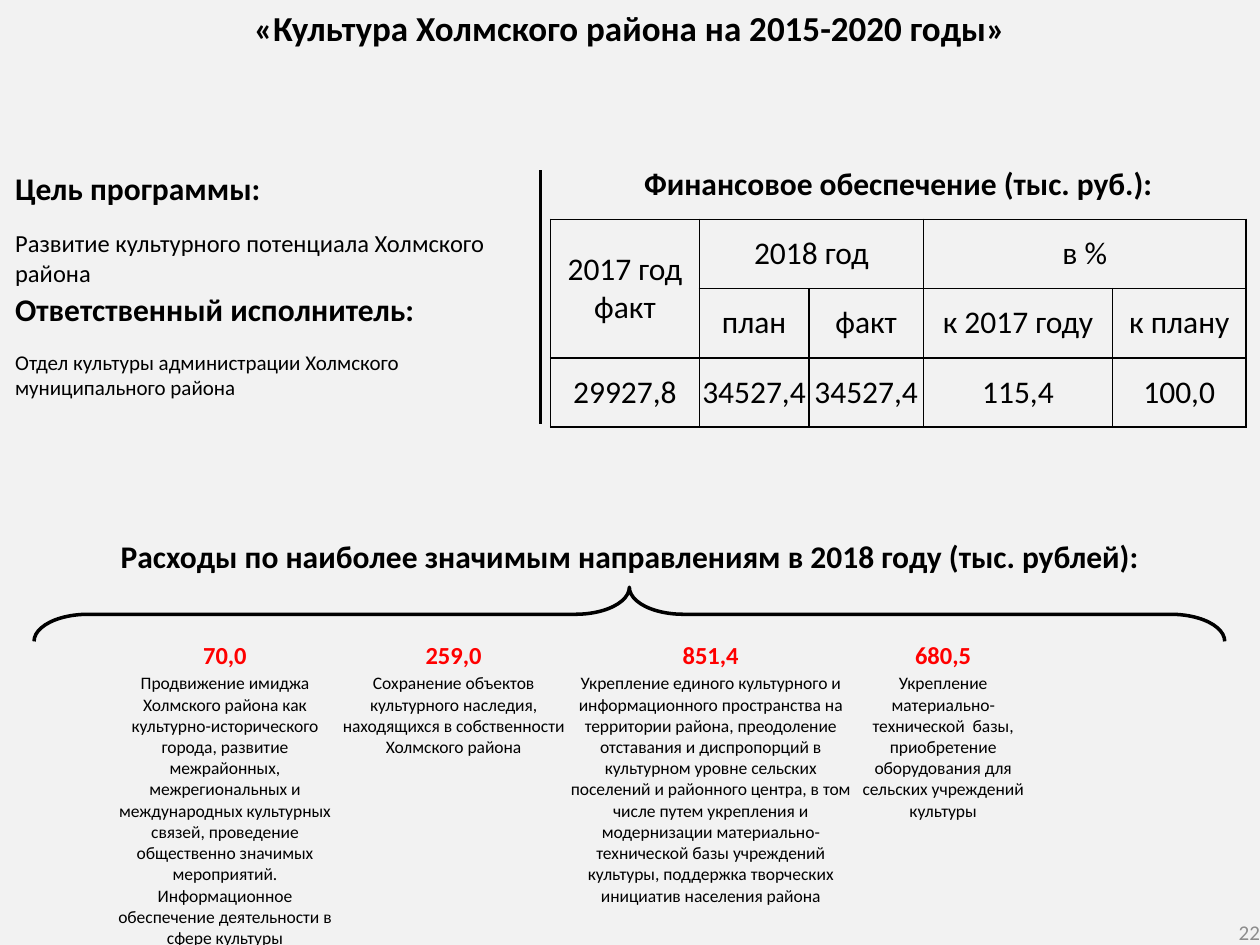
from dataclasses import dataclass

from lxml import etree
from pptx import Presentation
from pptx.dml.color import RGBColor
from pptx.enum.shapes import MSO_SHAPE
from pptx.enum.text import MSO_ANCHOR, PP_ALIGN
from pptx.oxml import parse_xml
from pptx.util import Inches, Pt

LEFT, CENTER, RIGHT = PP_ALIGN.LEFT, PP_ALIGN.CENTER, PP_ALIGN.RIGHT
TOP, MIDDLE, BOTTOM = MSO_ANCHOR.TOP, MSO_ANCHOR.MIDDLE, MSO_ANCHOR.BOTTOM
BRACE = MSO_SHAPE.RIGHT_BRACE
NS = "http://schemas.openxmlformats.org/drawingml/2006/main"
PLAIN = "{2D5ABB26-0587-4C30-8999-92F81FD0307C}"  # table style without grid


@dataclass(frozen=True)
class Theme:
    font: str = "Calibri"
    back: RGBColor = RGBColor(0xF2, 0xF2, 0xF2)
    ink: RGBColor = RGBColor(0, 0, 0)
    red: RGBColor = RGBColor(0xFF, 0, 0)
    grey: RGBColor = RGBColor(0x8C, 0x8C, 0x8C)
    title: int = 20
    head: int = 18
    body: int = 14
    small: int = 12
    tiny: int = 10


T = Theme()


def write(box, text, size, bold=False, color=T.ink, align=CENTER,
          anchor=MIDDLE, pad=None, edges=None):
    """Set text in a text box or table cell; edges maps L, R, T, B to points."""
    if edges is not None:
        props = box._tc.get_or_add_tcPr()
        for side, width in edges.items():
            props.append(parse_xml(
                f'<a:ln{side} xmlns:a="{NS}" w="{Pt(width)}"><a:solidFill>'
                f'<a:srgbClr val="{T.ink}"/></a:solidFill></a:ln{side}>'))
        box.fill.background()
    frame = box.text_frame
    frame.word_wrap = True
    frame.text = text
    for part in frame.paragraphs:
        part.alignment = align
        part.font.name, part.font.size = T.font, Pt(size)
        part.font.bold, part.font.color.rgb = bold, color
    # Cells keep anchor and margins on the cell, boxes on the frame.
    holder = frame if edges is None else box
    holder.vertical_anchor = anchor
    if pad is not None:
        holder.margin_left = holder.margin_right = Inches(pad)
        holder.margin_top = holder.margin_bottom = Inches(pad)
    return frame


def grid(left, top, cols, rows):
    """Add a plain table with the given column widths and row heights."""
    frame = slide.shapes.add_table(
        len(rows), len(cols), Inches(left), Inches(top),
        Inches(sum(cols)), Inches(sum(rows)))
    table = frame.table
    table.first_row = table.horz_banding = False
    table._tbl.tblPr[0].text = PLAIN
    for col, width in zip(table.columns, cols):
        col.width = Inches(width)
    for row, height in zip(table.rows, rows):
        row.height = Inches(height)
    return table


deck = Presentation()
deck.slide_width, deck.slide_height = Inches(10), Inches(7.5)
slide = deck.slides.add_slide(deck.slide_layouts[6])
slide.background.fill.solid()
slide.background.fill.fore_color.rgb = T.back

# Title with a soft text shadow
box = slide.shapes.add_textbox(0, 0, Inches(10), Inches(0.71))
frame = write(box, "«Культура Холмского района на 2015-2020 годы»",
              T.title, True, anchor=TOP)
run = frame.paragraphs[0].runs[0]
run._r.get_or_add_rPr().append(parse_xml(
    f'<a:effectLst xmlns:a="{NS}"><a:outerShdw blurRad="38100" dist="38100" '
    'dir="2700000" algn="tl"><a:srgbClr val="000000"><a:alpha val="43000"/>'
    '</a:srgbClr></a:outerShdw></a:effectLst>'))

box = slide.shapes.add_textbox(0, Inches(4.18), Inches(10), Inches(0.47))
write(box, "Расходы по наиболее значимым направлениям в 2018 году (тыс. рублей):",
      T.head, True)

# Funding table
funds = [
    ["Финансовое обеспечение (тыс. руб.):", "", "", "", ""],
    ["2017 год факт", "2018 год", "", "в %", ""],
    ["", "план", "факт", "к 2017 году", "к плану"],
    ["29927,8", "34527,4", "34527,4", "115,4", "100,0"],
]
table = grid(4.37, 1.19, [1.18, 0.87, 0.91, 1.5, 1.06], [0.55] * 4)
for r, row in enumerate(funds):
    for c, text in enumerate(row):
        write(table.cell(r, c), text, T.head, r == 0,
              pad=0.01 if r == 3 else 0.04,
              edges=dict.fromkeys("LRTB" if r else "B", 1))
for r, c, end_r, end_c in [(0, 0, 0, 4), (1, 0, 2, 0), (1, 1, 1, 2), (1, 3, 1, 4)]:
    table.cell(r, c).merge(table.cell(end_r, end_c))

# Brace over the spending columns
brace = slide.shapes.add_shape(
    BRACE, Inches(4.78), Inches(0.15), Inches(0.43), Inches(9.45))
brace.rotation = 270
brace.adjustments[0], brace.adjustments[1] = 0.997, 0.5
brace.shadow.inherit = False
brace.fill.background()
brace.line.color.rgb, brace.line.width = T.ink, Pt(2)

# Goal and owner
goals = [
    ("Цель программы:", T.head, True),
    ("Развитие культурного потенциала Холмского района", T.body, False),
    ("Ответственный исполнитель:", T.head, True),
    ("Отдел культуры администрации Холмского муниципального района",
     T.small, False),
]
table = grid(0.12, 1.35, [4.17], [0.47, 0.49, 0.47, 0.59])
for r, (text, size, bold) in enumerate(goals):
    write(table.cell(r, 0), text, size, bold, align=LEFT, anchor=TOP,
          pad=0, edges={"R": 2.25})

# Main spending lines
costs = [
    ("70,0", "Продвижение имиджа Холмского района как культурно-исторического "
     "города, развитие межрайонных, межрегиональных и международных культурных "
     "связей, проведение общественно значимых мероприятий. Информационное "
     "обеспечение деятельности в сфере культуры"),
    ("259,0", "Сохранение объектов культурного наследия, находящихся в "
     "собственности Холмского района"),
    ("851,4", "Укрепление единого культурного и информационного пространства на "
     "территории района, преодоление отставания и диспропорций в культурном "
     "уровне сельских поселений и районного центра, в том числе путем укрепления "
     "и модернизации материально-технической базы учреждений культуры, поддержка "
     "творческих инициатив населения района"),
    ("680,5", "Укрепление материально-технической  базы, приобретение "
     "оборудования для сельских учреждений культуры"),
    ("", ""),
]
table = grid(0.87, 5.08, [1.83, 1.8, 2.28, 1.41, 1.75], [0.23, 2.06])
for c, (value, text) in enumerate(costs):
    write(table.cell(0, c), value, T.body, True, T.red, anchor=BOTTOM,
          pad=0.01, edges={})
    write(table.cell(1, c), text, T.tiny, anchor=TOP, pad=0.01, edges={})
# Empty cells must not stretch their rows.
for row in table.rows:
    part = row.cells[4].text_frame.paragraphs[0]
    etree.SubElement(part._p, f"{{{NS}}}endParaRPr", sz=str(T.tiny * 100))

box = slide.shapes.add_textbox(
    Inches(7.67), Inches(7.29), Inches(2.33), Inches(0.21))
write(box, "22", T.small, color=T.grey, align=RIGHT, pad=0)

deck.save("out.pptx")
